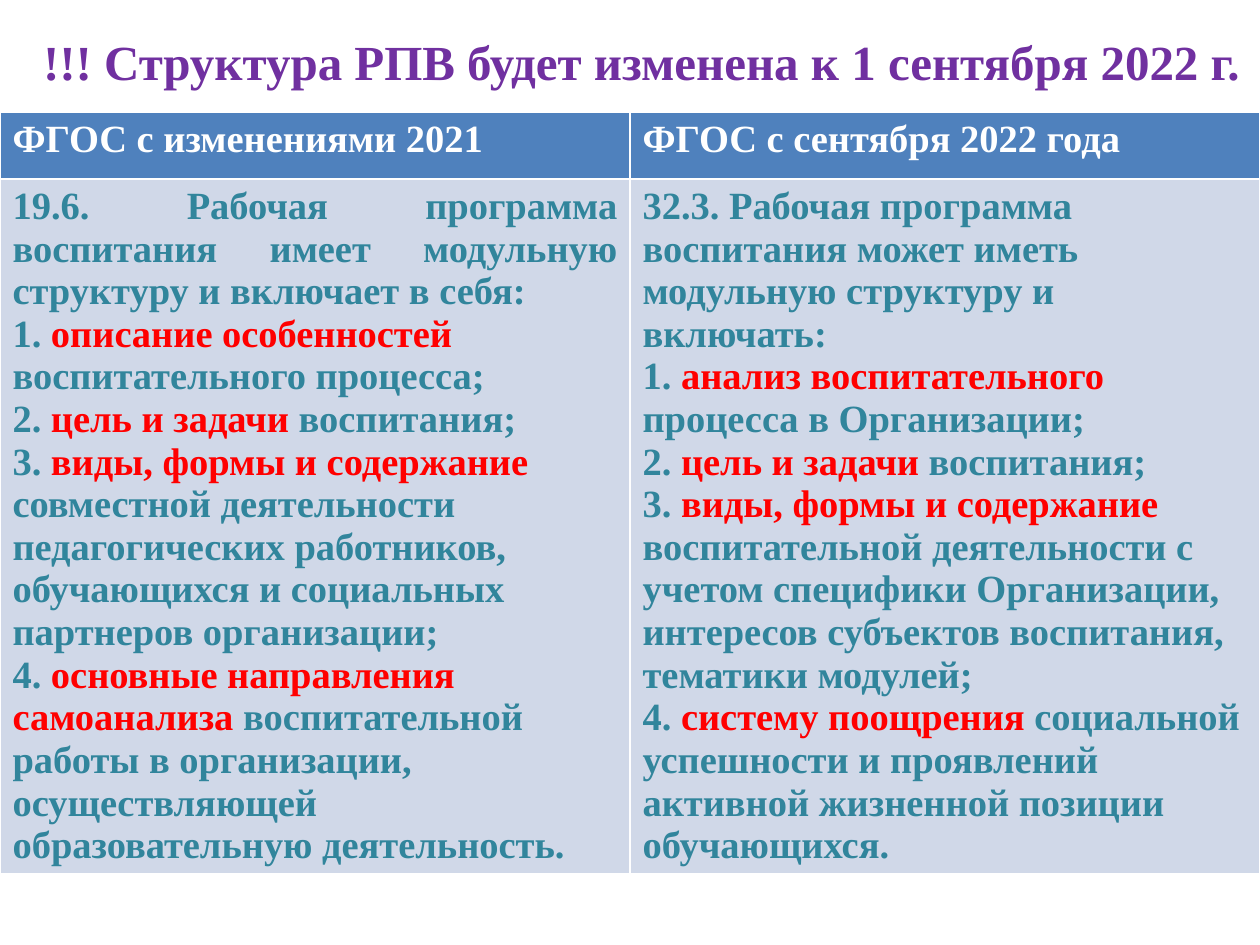
from lxml.etree import SubElement
from pptx import Presentation
from pptx.dml.color import RGBColor
from pptx.enum.text import MSO_ANCHOR, PP_ALIGN
from pptx.oxml.ns import qn
from pptx.util import Inches, Pt

PURPLE = RGBColor(0x70, 0x30, 0xA0)
WHITE = RGBColor(0xFF, 0xFF, 0xFF)
TEAL = RGBColor(0x31, 0x85, 0x9C)
RED = RGBColor(0xFF, 0x00, 0x00)
HEADER_BLUE = RGBColor(0x4F, 0x81, 0xBD)
BODY_BLUE = RGBColor(0xD0, 0xD8, 0xE8)
FONT = "Times New Roman"

TITLE = "!!! Структура РПВ будет изменена к 1 сентября 2022 г."
STANDARDS = [
    {
        "header": "ФГОС с изменениями 2021",
        "intro": "19.6. Рабочая программа воспитания имеет модульную структуру и включает в себя:",
        "align": PP_ALIGN.JUSTIFY,
        "auto_number": True,
        "items": [
            ("описание особенностей ", "воспитательного процесса;"),
            ("цель и задачи ", "воспитания;"),
            ("виды, формы и содержание ",
             "совместной деятельности педагогических работников, "
             "обучающихся и социальных партнеров организации;"),
            ("основные направления самоанализа ",
             "воспитательной работы в организации, осуществляющей "
             "образовательную деятельность."),
        ],
    },
    {
        "header": "ФГОС с сентября 2022 года",
        "intro": "32.3. Рабочая программа воспитания может иметь модульную структуру и включать:",
        "align": PP_ALIGN.LEFT,
        "auto_number": False,
        "items": [
            ("анализ воспитательного ", "процесса в Организации;"),
            ("цель и задачи ", "воспитания;"),
            ("виды, формы и содержание ",
             "воспитательной деятельности с учетом специфики Организации, "
             "интересов субъектов воспитания, тематики модулей;"),
            ("систему поощрения ",
             "социальной успешности и проявлений активной жизненной позиции обучающихся."),
        ],
    },
]


def add_text(paragraph, text, color, size=22):
    run = paragraph.add_run()
    run.text = text
    run.font.name = FONT
    run.font.size = Pt(size)
    run.font.bold = True
    run.font.color.rgb = color


def number_automatically(paragraph):
    properties = paragraph._p.get_or_add_pPr()
    properties.set("marL", "0")
    properties.set("indent", "0")
    SubElement(properties, qn("a:buFont"), typeface="+mj-lt")
    SubElement(properties, qn("a:buAutoNum"), type="arabicPeriod")


def fill_cell(cell, color):
    cell.fill.solid()
    cell.fill.fore_color.rgb = color
    return cell.text_frame


def fill_column(table, column, standard):
    header = fill_cell(table.cell(0, column), HEADER_BLUE)
    add_text(header.paragraphs[0], standard["header"], WHITE)

    body = fill_cell(table.cell(1, column), BODY_BLUE)
    intro = body.paragraphs[0]
    intro.alignment = standard["align"]
    add_text(intro, standard["intro"], TEAL)
    for number, (emphasis, rest) in enumerate(standard["items"], 1):
        item = body.add_paragraph()
        if standard["auto_number"]:
            number_automatically(item)
            add_text(item, " ", TEAL)
        else:
            add_text(item, f"{number}. ", TEAL)
        add_text(item, emphasis, RED)
        add_text(item, rest, TEAL)


def main():
    prs = Presentation()
    prs.slide_width, prs.slide_height = Inches(10), Inches(7.5)
    slide = prs.slides.add_slide(prs.slide_layouts[5])

    title = slide.shapes.title
    title.left, title.top = Inches(0.18), Inches(0.29)
    title.width, title.height = Inches(9.82), Inches(0.39)
    title.text_frame.vertical_anchor = MSO_ANCHOR.MIDDLE
    heading = title.text_frame.paragraphs[0]
    heading.alignment = PP_ALIGN.CENTER
    add_text(heading, TITLE, PURPLE, 28)

    table = slide.shapes.add_table(
        2, len(STANDARDS), 0, Inches(0.89), prs.slide_width, Inches(5.95)
    ).table
    for row, height in zip(table.rows, (0.53, 5.42)):
        row.height = Inches(height)
    for column, standard in enumerate(STANDARDS):
        fill_column(table, column, standard)

    prs.save("out.pptx")


if __name__ == "__main__":
    main()
